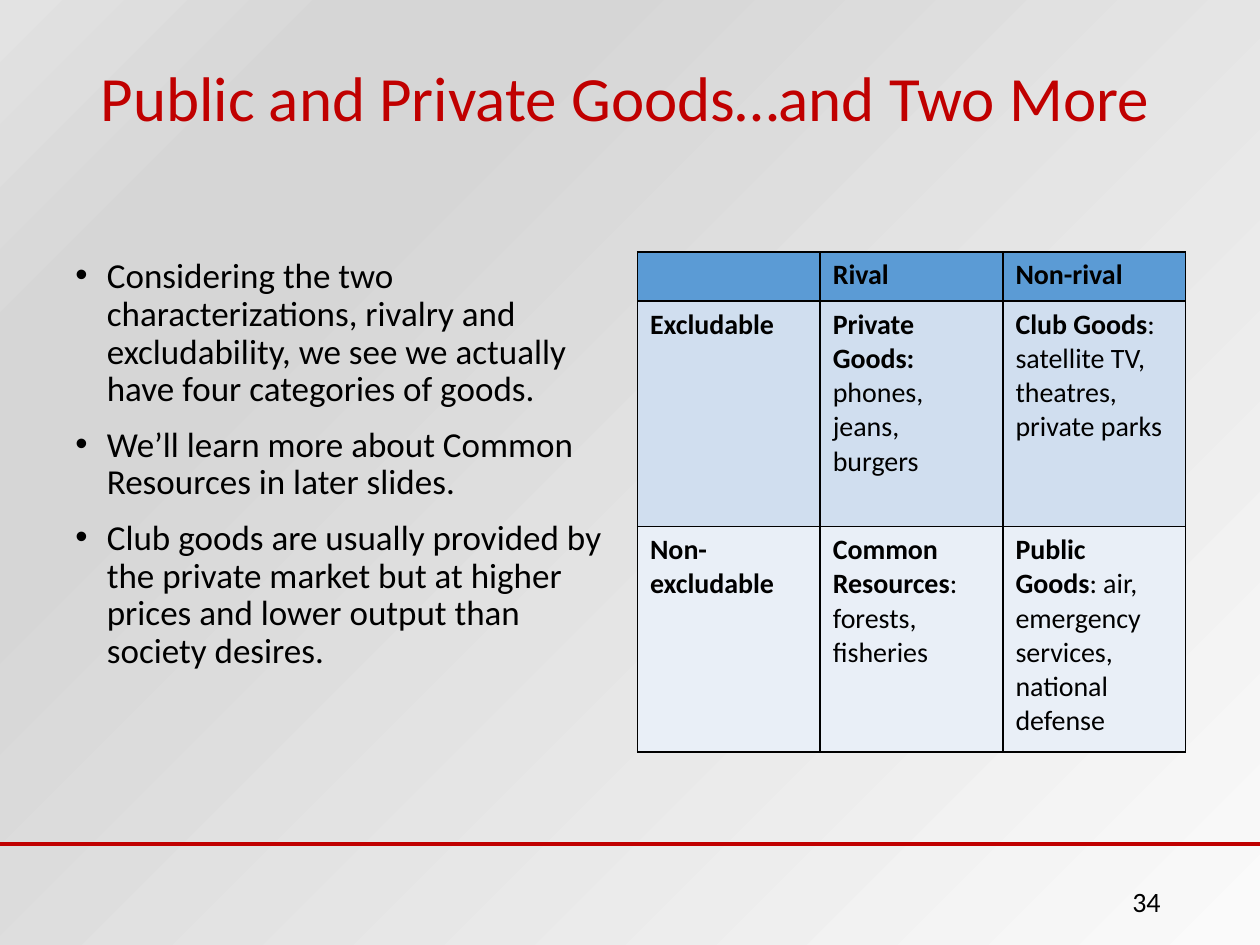
from dataclasses import dataclass

from lxml import etree
from pptx import Presentation
from pptx import util as u
from pptx.dml.color import RGBColor
from pptx.enum import shapes, text
from pptx.oxml import parse_xml
from pptx.oxml.ns import nsdecls, qn

PX = 9144  # EMU in one px, at 100 px to the inch
FONT = "Calibri"
RED = RGBColor(0xC0, 0x00, 0x00)
BLACK = RGBColor(0x00, 0x00, 0x00)
ROW_FILLS = [
    RGBColor(0x5B, 0x9B, 0xD5),
    RGBColor(0xD0, 0xDE, 0xEF),
    RGBColor(0xE9, 0xEF, 0xF7),
]
BACKGROUND_STOPS = [(0, "FAFAFA"), (74, "D6D6D6"), (83, "D6D6D6"), (100, "E3E3E3")]


@dataclass(frozen=True)
class Box:
    left: int
    top: int
    width: int
    height: int

    def emu(self) -> list[int]:
        return [n * PX for n in (self.left, self.top, self.width, self.height)]


@dataclass(frozen=True)
class Entry:
    """Table cell text: a bold term, then a plain list of examples."""
    term: str = ""
    examples: str = ""


BULLETS = [
    "Considering the two characterizations, rivalry and excludability, "
    "we see we actually have four categories of goods.",
    "We’ll learn more about Common Resources in later slides.",
    "Club goods are usually provided by the private market but at higher "
    "prices and lower output than society desires.",
]
GOODS = [
    [Entry(), Entry("Rival"), Entry("Non-rival")],
    [
        Entry("Excludable"),
        Entry("Private Goods: ", "phones, jeans, burgers"),
        Entry("Club Goods", ": satellite TV, theatres, private parks"),
    ],
    [
        Entry("Non-excludable"),
        Entry("Common Resources", ": forests, fisheries"),
        Entry("Public Goods", ": air, emergency services, national defense"),
    ],
]
COLUMN_WIDTH = 145
ROW_HEIGHTS = [39, 179, 179]
TABLE_BOX = Box(506, 200, COLUMN_WIDTH * 3, sum(ROW_HEIGHTS))


def style_run(run, size: int, color: RGBColor = BLACK, bold: bool = False) -> None:
    run.font.name = FONT
    run.font.size = u.Pt(size)
    run.font.color.rgb = color
    run.font.bold = bold


def set_background(slide) -> None:
    stops = "".join(
        f'<a:gs pos="{position * 1000}"><a:srgbClr val="{color}"/></a:gs>'
        for position, color in BACKGROUND_STOPS
    )
    background = parse_xml(
        f'<p:bg {nsdecls("p", "a")}><p:bgPr><a:gradFill><a:gsLst>{stops}</a:gsLst>'
        '<a:path path="circle"><a:fillToRect l="100000" t="100000"/></a:path>'
        "</a:gradFill><a:effectLst/></p:bgPr></p:bg>"
    )
    slide.element.cSld.insert(0, background)


def add_text(slide, box: Box, content: str, size: int, color: RGBColor = BLACK,
             anchor=text.MSO_ANCHOR.MIDDLE, align=text.PP_ALIGN.LEFT,
             line_spacing: float = 1.0):
    text_frame = slide.shapes.add_textbox(*box.emu()).text_frame
    text_frame.word_wrap = True
    text_frame.vertical_anchor = anchor
    text_frame.text = content
    for paragraph in text_frame.paragraphs:
        paragraph.alignment = align
        paragraph.line_spacing = line_spacing
        for run in paragraph.runs:
            style_run(run, size, color)
    return text_frame


def add_bullets(text_frame) -> None:
    for index, paragraph in enumerate(text_frame.paragraphs):
        if index:
            paragraph.space_before = u.Pt(10)
        properties = paragraph._p.get_or_add_pPr()
        properties.set("marL", str(25 * PX))
        properties.set("indent", str(-25 * PX))
        font = etree.SubElement(properties, qn("a:buFont"))
        font.set("typeface", "Arial")
        etree.SubElement(properties, qn("a:buChar")).set("char", "•")


def add_rule(slide, y: int, width: int) -> None:
    line = slide.shapes.add_connector(
        shapes.MSO_CONNECTOR.STRAIGHT, 0, y * PX, width * PX, y * PX)
    line.line.color.rgb = RED
    line.line.width = u.Pt(2)
    etree.SubElement(line._element.spPr, qn("a:effectLst"))


def set_borders(cell) -> None:
    properties = cell._tc.get_or_add_tcPr()
    for index, side in enumerate(("lnL", "lnR", "lnT", "lnB")):
        properties.insert(index, parse_xml(
            f'<a:{side} {nsdecls("a")} w="12700"><a:solidFill>'
            f'<a:srgbClr val="{BLACK}"/></a:solidFill></a:{side}>'))


def fill_cell(cell, entry: Entry, fill: RGBColor) -> None:
    cell.fill.solid()
    cell.fill.fore_color.rgb = fill
    set_borders(cell)
    paragraph = cell.text_frame.paragraphs[0]
    for words, bold in ((entry.term, True), (entry.examples, False)):
        if words:
            run = paragraph.add_run()
            run.text = words
            style_run(run, 16, bold=bold)
    if not entry.term:  # keeps the empty cell from stretching its row
        etree.SubElement(paragraph._p, qn("a:endParaRPr")).set("sz", "1600")


def add_goods_table(slide) -> None:
    table = slide.shapes.add_table(len(GOODS), len(GOODS[0]), *TABLE_BOX.emu()).table
    for column in table.columns:
        column.width = COLUMN_WIDTH * PX
    for r, (entries, height, fill) in enumerate(zip(GOODS, ROW_HEIGHTS, ROW_FILLS)):
        table.rows[r].height = height * PX
        for c, entry in enumerate(entries):
            fill_cell(table.cell(r, c), entry, fill)


def main() -> None:
    presentation = Presentation()
    presentation.slide_width = 1000 * PX
    presentation.slide_height = 750 * PX
    slide = presentation.slides.add_slide(presentation.slide_layouts[6])
    set_background(slide)

    # Title and bullets
    add_text(slide, Box(70, 20, 860, 120), "Public and Private Goods…and Two More",
             36, RED, line_spacing=0.9)
    body = add_text(slide, Box(50, 200, 440, 440), "\n".join(BULLETS), 20,
                    anchor=text.MSO_ANCHOR.TOP, line_spacing=0.9)
    add_bullets(body)

    # Footer rule and page number
    add_rule(slide, 670, 1000)
    add_text(slide, Box(706, 695, 225, 40), "34", 16, align=text.PP_ALIGN.RIGHT)

    # Four categories of goods
    add_goods_table(slide)
    presentation.save("out.pptx")


if __name__ == "__main__":
    main()
